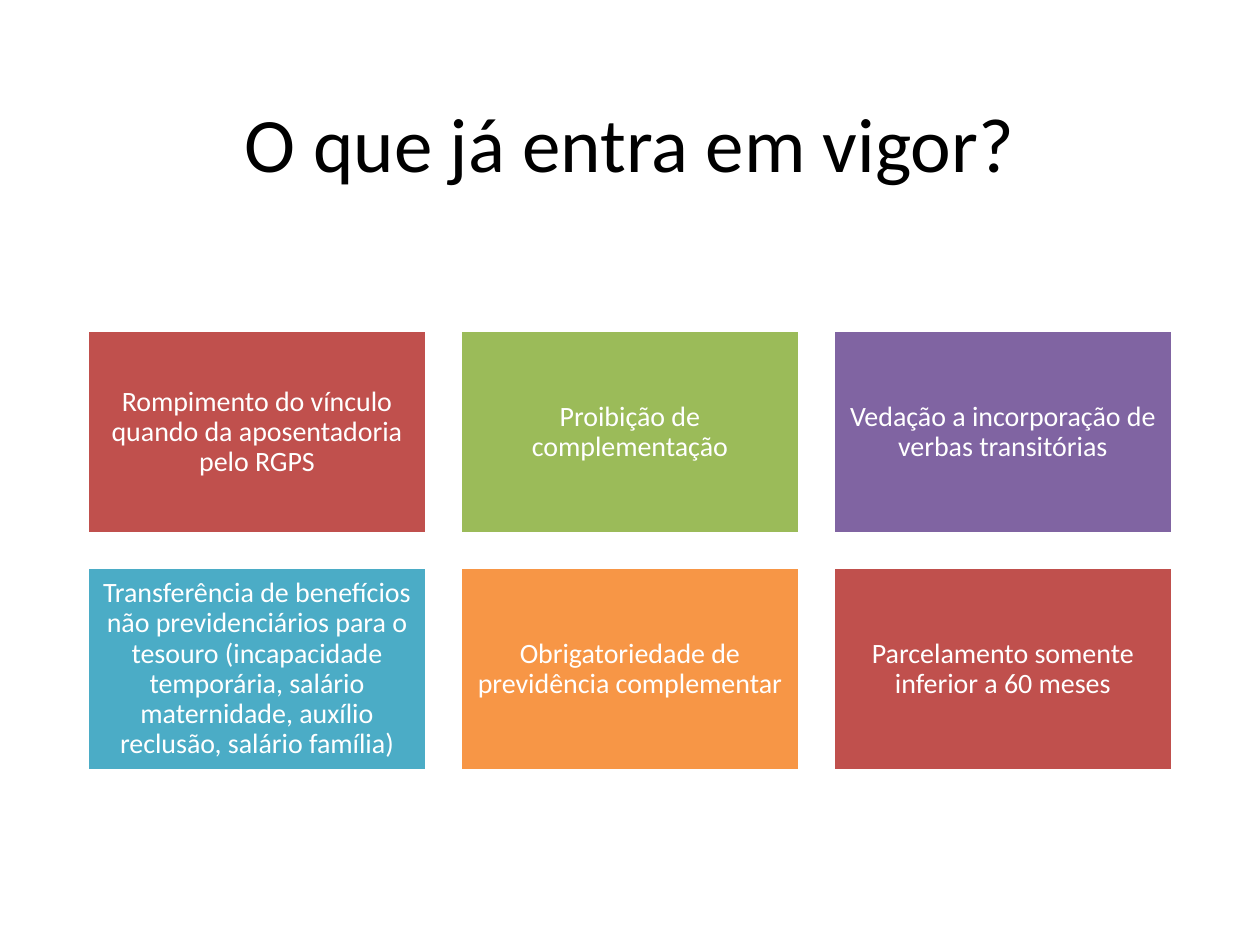
"""Build a slide with a title above a three-by-two grid of coloured tiles."""
from pptx import Presentation
from pptx.dml.color import RGBColor
from pptx.enum.shapes import MSO_SHAPE
from pptx.enum.text import MSO_ANCHOR, PP_ALIGN
from pptx.util import Inches, Pt

RECTANGLE = MSO_SHAPE.RECTANGLE
MIDDLE = MSO_ANCHOR.MIDDLE
CENTER = PP_ALIGN.CENTER

COLORS = {
    "black": "000000",
    "white": "FFFFFF",
    "red": "C0504D",
    "green": "9BBB59",
    "purple": "8064A2",
    "teal": "4BACC6",
    "orange": "F79646",
}
TILES = [
    ("Rompimento do vínculo quando da aposentadoria pelo RGPS", "red"),
    ("Proibição de complementação", "green"),
    ("Vedação a incorporação de verbas transitórias", "purple"),
    ("Transferência de benefícios não previdenciários para o tesouro "
     "(incapacidade temporária, salário maternidade, auxílio reclusão, "
     "salário família)", "teal"),
    ("Obrigatoriedade de previdência complementar", "orange"),
    ("Parcelamento somente inferior a 60 meses", "red"),
]
COLUMNS = 3
MARGIN, GRID_TOP = 0.69, 2.62
TILE_WIDTH, TILE_HEIGHT = 2.7, 1.62
SLIDE_WIDTH, SLIDE_HEIGHT = 10, 7.5
CONTENT_WIDTH = SLIDE_WIDTH - 2 * MARGIN
GAP = (CONTENT_WIDTH - COLUMNS * TILE_WIDTH) / (COLUMNS - 1)


def write_text(shape, text, size, color, spacing=1.0, inset=0.1):
    frame = shape.text_frame
    frame.word_wrap = True
    frame.vertical_anchor = MIDDLE
    frame.margin_left = frame.margin_right = Inches(inset)
    frame.margin_top = frame.margin_bottom = Inches(min(inset, 0.07))
    paragraph = frame.paragraphs[0]
    paragraph.alignment = CENTER
    paragraph.line_spacing = spacing
    run = paragraph.add_run()
    run.text = text
    run.font.name = "Calibri"
    run.font.size = Pt(size)
    run.font.color.rgb = RGBColor.from_string(COLORS[color])


presentation = Presentation()
presentation.slide_width = Inches(SLIDE_WIDTH)
presentation.slide_height = Inches(SLIDE_HEIGHT)
slide = presentation.slides.add_slide(presentation.slide_layouts[6])

title = slide.shapes.add_textbox(
    Inches(MARGIN), Inches(0.4), Inches(CONTENT_WIDTH), Inches(1.45))
write_text(title, "O que já entra em vigor?", size=44, color="black")

for index, (text, color) in enumerate(TILES):
    row, column = divmod(index, COLUMNS)
    tile = slide.shapes.add_shape(
        RECTANGLE,
        Inches(MARGIN + column * (TILE_WIDTH + GAP)),
        Inches(GRID_TOP + row * (TILE_HEIGHT + GAP)),
        Inches(TILE_WIDTH), Inches(TILE_HEIGHT))
    tile.shadow.inherit = False
    tile.fill.solid()
    tile.fill.fore_color.rgb = RGBColor.from_string(COLORS[color])
    tile.line.color.rgb = RGBColor.from_string(COLORS["white"])
    tile.line.width = Pt(2)
    write_text(tile, text, size=16, color="white", spacing=0.9, inset=0.07)

presentation.save("out.pptx")
